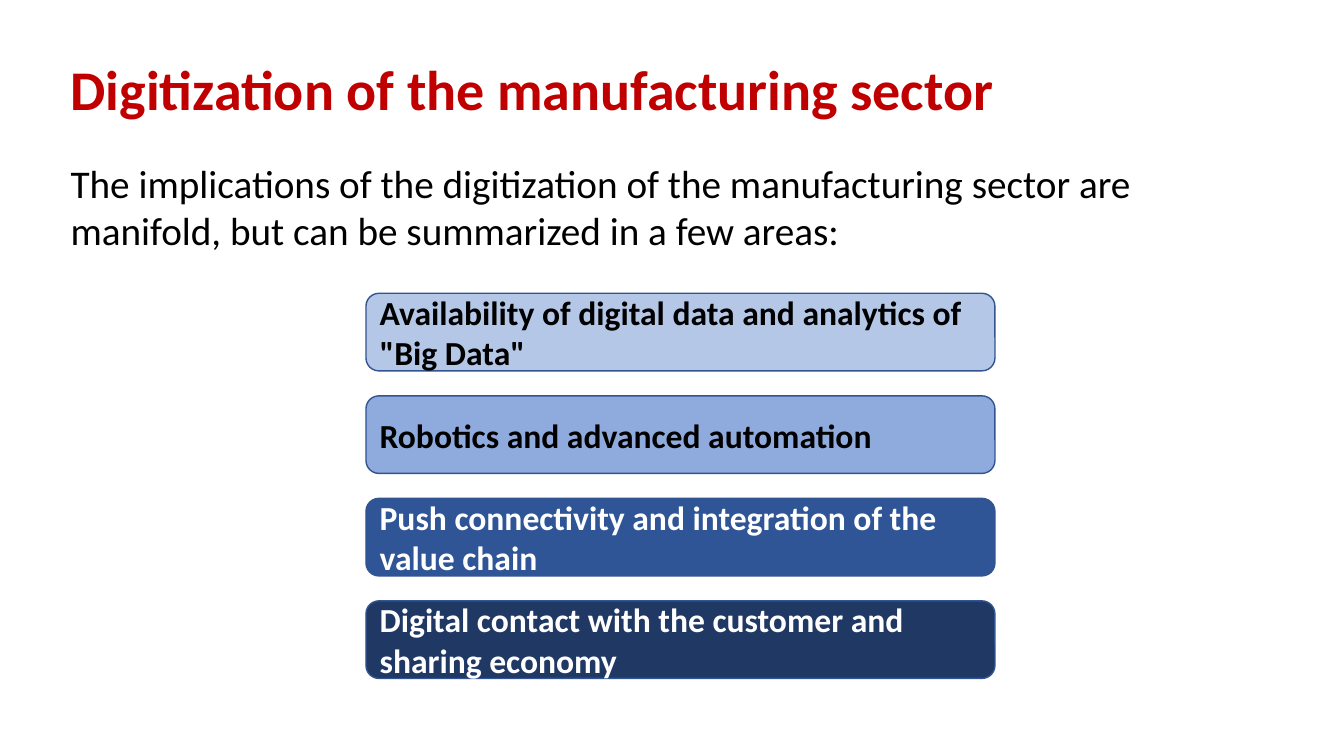
from dataclasses import dataclass

from lxml import etree
from pptx import Presentation
from pptx import util as u
from pptx.dml.color import RGBColor
from pptx.enum import shapes, text
from pptx.oxml.ns import qn
from pptx.shapes.base import BaseShape
from pptx.slide import Slide

COLUMN = u.Inches(13.33) / 100
ROW = u.Inches(7.5) / 100


@dataclass(frozen=True)
class Theme:
    font: str = "Calibri"
    title: str = "C00000"
    dark: str = "000000"
    light: str = "FFFFFF"
    outline: str = "325491"
    title_size: int = 40
    intro_size: int = 28
    area_size: int = 24


@dataclass(frozen=True)
class Cell:
    column: float
    row: float
    columns: float
    rows: float


@dataclass(frozen=True)
class Area:
    label: str
    fill: str
    ink: str


THEME = Theme()
TITLE_CELL = Cell(4.5, 6.53, 72.83, 10.27)
INTRO_CELL = Cell(4.5, 20.4, 85.13, 14)
FIRST_AREA = Cell(27.23, 38.8, 46.8, 10.27)
AREA_STEP = 13.56
AREAS = (
    Area('Availability of digital data and analytics of "Big Data"', "B4C7E7", THEME.dark),
    Area("Robotics and advanced automation", "8FAADC", THEME.dark),
    Area("Push connectivity and integration of the value chain", "2F5597", THEME.light),
    Area("Digital contact with the customer and sharing economy", "203864", THEME.light),
)


def place(box: BaseShape, cell: Cell) -> None:
    box.left, box.width = round(cell.column * COLUMN), round(cell.columns * COLUMN)
    box.top, box.height = round(cell.row * ROW), round(cell.rows * ROW)


def write(box: BaseShape, words: str, size: int, color: str, bold: bool,
          anchor: text.MSO_ANCHOR) -> None:
    frame = box.text_frame
    frame.text = words
    frame.word_wrap = True
    frame.auto_size = text.MSO_AUTO_SIZE.NONE
    frame.vertical_anchor = anchor
    para = frame.paragraphs[0]
    para.alignment = text.PP_ALIGN.LEFT
    para.space_before = u.Pt(0)
    span = para.runs[0]
    span.font.name = THEME.font
    span.font.size = u.Pt(size)
    span.font.bold = bold
    span.font.color.rgb = RGBColor.from_string(color)


def remove_bullet(box: BaseShape) -> None:
    properties = box.text_frame.paragraphs[0]._p.get_or_add_pPr()
    properties.set("marL", "0")
    properties.set("indent", "0")
    etree.SubElement(properties, qn("a:buNone"))


def draw_area(page: Slide, area: Area, cell: Cell) -> None:
    box = page.shapes.add_shape(shapes.MSO_SHAPE.ROUNDED_RECTANGLE, 0, 0, 0, 0)
    place(box, cell)
    box.shadow.inherit = False
    box.fill.solid()
    box.fill.fore_color.rgb = RGBColor.from_string(area.fill)
    box.line.color.rgb = RGBColor.from_string(THEME.outline)
    box.line.width = u.Pt(1)
    write(box, area.label, THEME.area_size, area.ink, True, text.MSO_ANCHOR.MIDDLE)


def main() -> None:
    deck = Presentation()
    deck.slide_width, deck.slide_height = u.Inches(13.33), u.Inches(7.5)
    page = deck.slides.add_slide(deck.slide_layouts[1])

    title = page.shapes.title
    place(title, TITLE_CELL)
    write(title, "Digitization of the manufacturing sector",
          THEME.title_size, THEME.title, True, text.MSO_ANCHOR.TOP)

    intro = page.placeholders[1]
    place(intro, INTRO_CELL)
    write(intro, "The implications of the digitization of the manufacturing sector are "
          "manifold, but can be summarized in a few areas:",
          THEME.intro_size, THEME.dark, False, text.MSO_ANCHOR.TOP)
    remove_bullet(intro)

    for index, area in enumerate(AREAS):
        row = FIRST_AREA.row + index * AREA_STEP
        draw_area(page, area, Cell(FIRST_AREA.column, row, FIRST_AREA.columns, FIRST_AREA.rows))

    deck.save("out.pptx")


if __name__ == "__main__":
    main()
